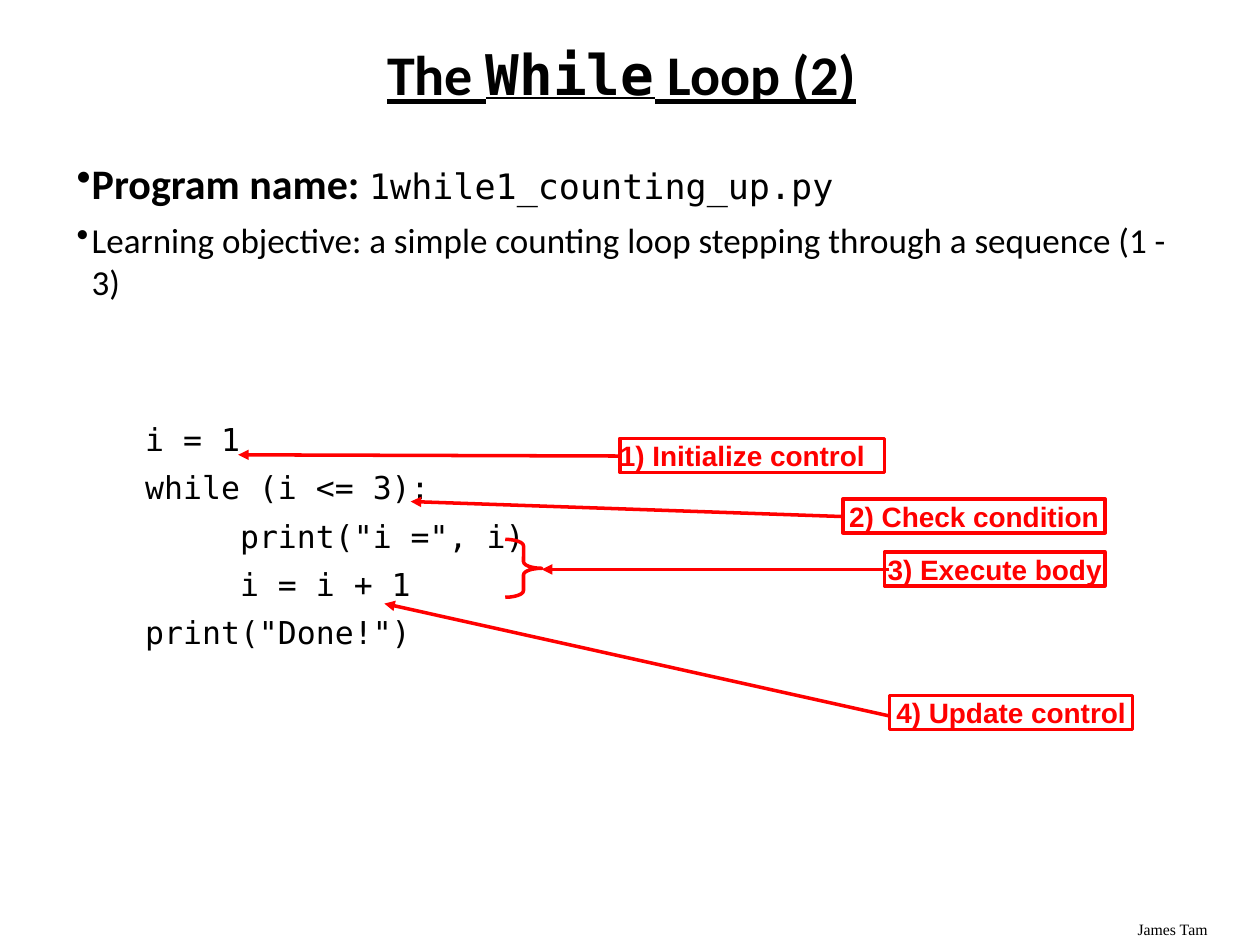
"""Build the slide that explains a counting while loop with four labelled steps."""
from lxml import etree
from pptx import Presentation
from pptx.dml.color import RGBColor
from pptx.enum.shapes import MSO_CONNECTOR, MSO_SHAPE
from pptx.enum.text import MSO_ANCHOR, PP_ALIGN
from pptx.oxml.ns import qn
from pptx.util import Pt

BLACK = RGBColor(0, 0, 0)
RED = RGBColor(255, 0, 0)
LEFT, CENTER = PP_ALIGN.LEFT, PP_ALIGN.CENTER
TOP, MIDDLE = MSO_ANCHOR.TOP, MSO_ANCHOR.MIDDLE
RECTANGLE, BRACE = MSO_SHAPE.RECTANGLE, MSO_SHAPE.RIGHT_BRACE
STRAIGHT = MSO_CONNECTOR.STRAIGHT
SANS, MONO, SERIF, LABEL_FONT = "Calibri", "DejaVu Sans Mono", "Times New Roman", "Arial"

TITLE = [("The ", SANS), ("While", MONO), (" Loop (2)", SANS)]
BULLETS = [
    [("Program name: ", SANS, 24, True), ("1while1_counting_up.py", MONO, 20, False)],
    [("Learning objective: a simple counting loop stepping through a sequence (1 - 3)",
      SANS, 20, False)],
]
CODE = [
    (0, "i = 1"),
    (0, "while (i <= 3):"),
    (1, 'print("i =", i)'),
    (1, "i = i + 1"),
    (0, 'print("Done!")'),
]
STEPS = [
    ("1) Initialize control", LEFT, (354.2, 250.6, 151.2), (355, 260.6), (136.1, 259.9)),
    ("2) Check condition", CENTER, (481.7, 285.1, 149.8), (482.4, 295.2), (234.7, 286.6)),
    ("3) Execute body", CENTER, (505.4, 315.4, 126), (508.3, 325.4), (309.6, 325.4)),
    ("4) Update control", CENTER, (508.3, 397.4, 139), (507.6, 409), (219.6, 344.9)),
]
LABEL_HEIGHT = 19.4
BRACE_BOX = (288.7, 308.2, 20.9, 33.1)
CODE_INDENT = 54.2
BULLET_INDENT = 8.64
PARAGRAPH_GAP = 6


def points(*values):
    return [Pt(value) for value in values]


def set_font(font, name, size, color, bold=False):
    font.name, font.size, font.bold = name, Pt(size), bold
    font.color.rgb = color


def set_frame(shape, anchor=TOP, margins=(7.2, 3.6), wrap=True):
    frame = shape.text_frame
    frame.word_wrap = wrap
    frame.vertical_anchor = anchor
    frame.margin_left = frame.margin_right = Pt(margins[0])
    frame.margin_top = frame.margin_bottom = Pt(margins[1])
    return frame


def add_text(slide, box, **options):
    return set_frame(slide.shapes.add_textbox(*points(*box)), **options)


def add_paragraph(frame, index):
    paragraph = frame.add_paragraph() if index else frame.paragraphs[0]
    paragraph.space_after = Pt(PARAGRAPH_GAP)
    return paragraph


def add_run(paragraph, text, *style):
    run = paragraph.add_run()
    run.text = text
    set_font(run.font, *style)
    return run


def add_outline(slide, kind, box):
    shape = slide.shapes.add_shape(kind, *points(*box))
    shape.shadow.inherit = False
    shape.fill.background()
    shape.line.color.rgb = RED
    shape.line.width = Pt(2)
    return shape


def add_arrow(slide, start, end):
    arrow = slide.shapes.add_connector(STRAIGHT, *points(*start, *end))
    arrow.line.color.rgb = RED
    arrow.line.width = Pt(2)
    etree.SubElement(arrow.line._get_or_add_ln(), qn("a:tailEnd"), type="triangle")
    etree.SubElement(arrow._element.spPr, qn("a:effectLst"))


def add_title(slide):
    frame = add_text(slide, (33.8, 23.8, 643, 41), anchor=MIDDLE)
    paragraph = frame.paragraphs[0]
    paragraph.alignment = CENTER
    paragraph.line_spacing = 0.9
    for text, font in TITLE:
        add_run(paragraph, text, font, 32, BLACK, True).font.underline = True


def add_bullets(slide):
    frame = add_text(slide, (36.7, 86.4, 643.7, 95))
    for index, runs in enumerate(BULLETS):
        paragraph = add_paragraph(frame, index)
        properties = paragraph._p.get_or_add_pPr()
        properties.set("marL", str(Pt(BULLET_INDENT)))
        properties.set("indent", str(-Pt(BULLET_INDENT)))
        etree.SubElement(properties, qn("a:buChar"), char="•")
        for text, font, size, bold in runs:
            add_run(paragraph, text, font, size, BLACK, bold)


def add_code(slide):
    frame = add_text(slide, (83, 240, 260, 135), margins=(0, 0))
    for index, (level, text) in enumerate(CODE):
        paragraph = add_paragraph(frame, index)
        paragraph._p.get_or_add_pPr().set("marL", str(Pt(level * CODE_INDENT)))
        paragraph.text = text
        set_font(paragraph.font, MONO, 18, BLACK)


def add_steps(slide):
    for text, alignment, (left, top, width), start, end in STEPS:
        add_arrow(slide, start, end)
        label = add_outline(slide, RECTANGLE, (left, top, width, LABEL_HEIGHT))
        paragraph = set_frame(label, MIDDLE, (0, 0)).paragraphs[0]
        paragraph.text = text
        paragraph.alignment = alignment
        set_font(paragraph.font, LABEL_FONT, 16, RED, True)
    brace = add_outline(slide, BRACE, BRACE_BOX)
    brace.adjustments[0] = 0.18


def add_author(slide):
    paragraph = add_text(slide, (643, 522, 72, 18)).paragraphs[0]
    paragraph.text = "James Tam"
    set_font(paragraph.font, SERIF, 9, BLACK)


def main():
    presentation = Presentation()
    presentation.slide_width, presentation.slide_height = points(720, 540)
    slide = presentation.slides.add_slide(presentation.slide_layouts[6])
    for add_part in (add_author, add_title, add_bullets, add_code, add_steps):
        add_part(slide)
    presentation.save("out.pptx")


if __name__ == "__main__":
    main()
